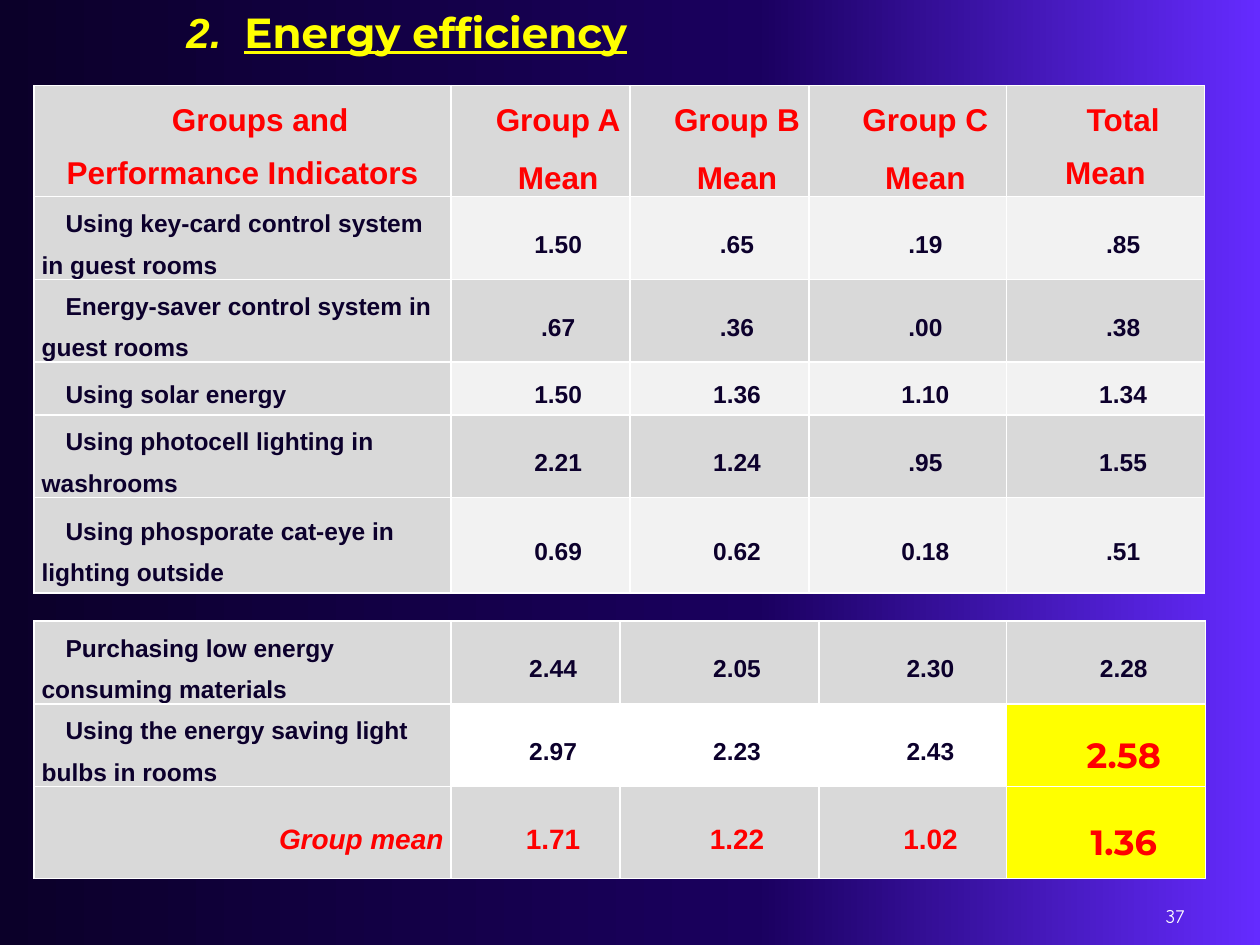
from lxml.etree import SubElement
from copy import deepcopy
from pptx import Presentation
from pptx.dml.color import RGBColor
from pptx.enum.text import MSO_ANCHOR as Anchor, PP_ALIGN as Align
from pptx.oxml.ns import qn
from pptx.util import Inches, Pt

GREY, LIGHT, WHITE, YELLOW = "D9D9D9", "F2F2F2", "FFFFFF", "FFFF00"
RED, NAVY = "FF0000", "0C002C"

HEADER = ["Groups and Performance Indicators", "Group A\nMean", "Group B\nMean",
          "Group C\nMean", "Total Mean"]
# Each row: fill of the value cells, then the texts
INDICATORS = [
    (LIGHT, ["Using key-card control system in guest rooms", "1.50", ".65", ".19", ".85"]),
    (GREY, ["Energy-saver control system in guest rooms", ".67", ".36", ".00", ".38"]),
    (LIGHT, ["Using solar energy", "1.50", "1.36", "1.10", "1.34"]),
    (GREY, ["Using photocell lighting in washrooms", "2.21", "1.24", ".95", "1.55"]),
    (LIGHT, ["Using phosporate cat-eye in lighting outside", "0.69", "0.62", "0.18", ".51"]),
]
MORE_INDICATORS = [
    (GREY, ["Purchasing low energy consuming materials", "2.44", "2.05", "2.30", "2.28"]),
    (WHITE, ["Using the energy saving light bulbs in rooms", "2.97", "2.23", "2.43", "2.58"]),
]
GROUP_MEANS = ["Group mean", "1.71", "1.22", "1.02", "1.36"]


def rgb(color):
    return RGBColor.from_string(color)


def set_font(font, size, color, name="Arial", bold=True, italic=False):
    font.size, font.name = Pt(size), name
    font.bold, font.italic = bold, italic
    font.color.rgb = rgb(color)


def set_indent(paragraph, first_line, left=0):
    properties = paragraph._p.get_or_add_pPr()
    properties.set("marL", str(Inches(left)))
    properties.set("indent", str(Inches(first_line)))


def set_background(slide, colors, positions):
    fill = slide.background.fill
    fill.gradient()
    fill.gradient_angle = 0
    stop_list = fill._fill._gradFill.find(qn("a:gsLst"))
    stop_list.append(deepcopy(stop_list[-1]))
    for stop, color, position in zip(fill.gradient_stops, colors, positions):
        stop.color.rgb = rgb(color)
        stop.position = position


def add_borders(cell):
    properties = cell._tc.get_or_add_tcPr()
    for side in ("lnL", "lnR", "lnT", "lnB"):
        line = SubElement(properties, qn(f"a:{side}"), w=str(Pt(1)))
        solid = SubElement(line, qn("a:solidFill"))
        SubElement(solid, qn("a:srgbClr"), val=WHITE)


def fill_cell(cell, text, fill, size=14, color=NAVY, name="Arial", italic=False,
              align=Align.CENTER, indent=0.28, anchor=Anchor.MIDDLE):
    add_borders(cell)
    cell.fill.solid()
    cell.fill.fore_color.rgb = rgb(fill)
    cell.margin_left = cell.margin_right = Inches(0.06)
    cell.margin_top = cell.margin_bottom = 0
    cell.vertical_anchor = anchor
    cell.text = text
    for paragraph in cell.text_frame.paragraphs:
        paragraph.alignment = align
        paragraph.line_spacing = 1.5
        paragraph.space_before = Pt(3)
        set_indent(paragraph, indent)
        set_font(paragraph.font, size, color, name, italic=italic)


def fill_indicator_rows(table, rows, first_row=0):
    for row_index, (fill, texts) in enumerate(rows, first_row):
        fill_cell(table.cell(row_index, 0), texts[0], GREY, align=Align.LEFT, indent=0.19)
        for column, text in enumerate(texts[1:], 1):
            fill_cell(table.cell(row_index, column), text, fill)


def add_table(slide, left, top, widths, heights):
    table = slide.shapes.add_table(
        len(heights), len(widths), Inches(left), Inches(top),
        Inches(sum(widths)), Inches(sum(heights))).table
    table.first_row = table.horz_banding = False
    for column, width in zip(table.columns, widths):
        column.width = Inches(width)
    for row, height in zip(table.rows, heights):
        row.height = Inches(height)
    return table


def add_main_table(slide):
    table = add_table(slide, 0.27, 0.68, [3.31, 1.42, 1.42, 1.57, 1.57],
                      [0.79, 0.63, 0.61, 0.42, 0.55, 0.76])
    for column, text in enumerate(HEADER):
        fill_cell(table.cell(0, column), text, GREY, size=18, color=RED, anchor=Anchor.TOP)
    fill_indicator_rows(table, INDICATORS, first_row=1)


def add_summary_table(slide):
    table = add_table(slide, 0.27, 4.93, [3.31, 1.34, 1.58, 1.49, 1.58], [0.62, 0.58, 0.73])
    # The last cells of the final two rows are highlighted below
    fill_indicator_rows(table, MORE_INDICATORS[:1])
    label, *values, total = MORE_INDICATORS[1][1]
    fill_indicator_rows(table, [(WHITE, [label, *values])], first_row=1)
    mean_label, *means, overall = GROUP_MEANS
    fill_cell(table.cell(2, 0), mean_label, GREY, 16, RED, italic=True, align=Align.RIGHT)
    for column, text in enumerate(means, 1):
        fill_cell(table.cell(2, column), text, GREY, 16, RED)
    for row, text in enumerate([total, overall], 1):
        fill_cell(table.cell(row, 4), text, YELLOW, 20, RED, "Montserrat")


def set_title(slide):
    title = slide.shapes.title
    title.left, title.top = Inches(1.38), 0
    title.width, title.height = Inches(7.17), Inches(0.91)
    title.text_frame.vertical_anchor = Anchor.TOP
    paragraph = title.text_frame.paragraphs[0]
    paragraph.alignment = Align.LEFT
    set_indent(paragraph, -0.46, left=0.46)
    number, heading = paragraph.add_run(), paragraph.add_run()
    number.text, heading.text = "2.\t", "Energy efficiency"
    set_font(number.font, 24, YELLOW, italic=True)
    set_font(heading.font, 24, YELLOW, "Montserrat")
    heading.font.underline = True


def add_page_number(slide, text):
    box = slide.shapes.add_textbox(Inches(7.17), Inches(7.13), Inches(2.33), Inches(0.28))
    frame = box.text_frame
    frame.word_wrap = True
    frame.vertical_anchor = Anchor.MIDDLE
    paragraph = frame.paragraphs[0]
    paragraph.text = text
    paragraph.alignment = Align.RIGHT
    set_font(paragraph.font, 11, WHITE, "Comic Neue", bold=False)


def main():
    presentation = Presentation()
    presentation.slide_width, presentation.slide_height = Inches(10), Inches(7.5)
    slide = presentation.slides.add_slide(presentation.slide_layouts[5])
    set_background(slide, ["0B0029", "1A005F", "652BFF"], [0, 0.6, 1])
    add_main_table(slide)
    set_title(slide)
    add_summary_table(slide)
    add_page_number(slide, "37")
    presentation.save("out.pptx")


if __name__ == "__main__":
    main()
